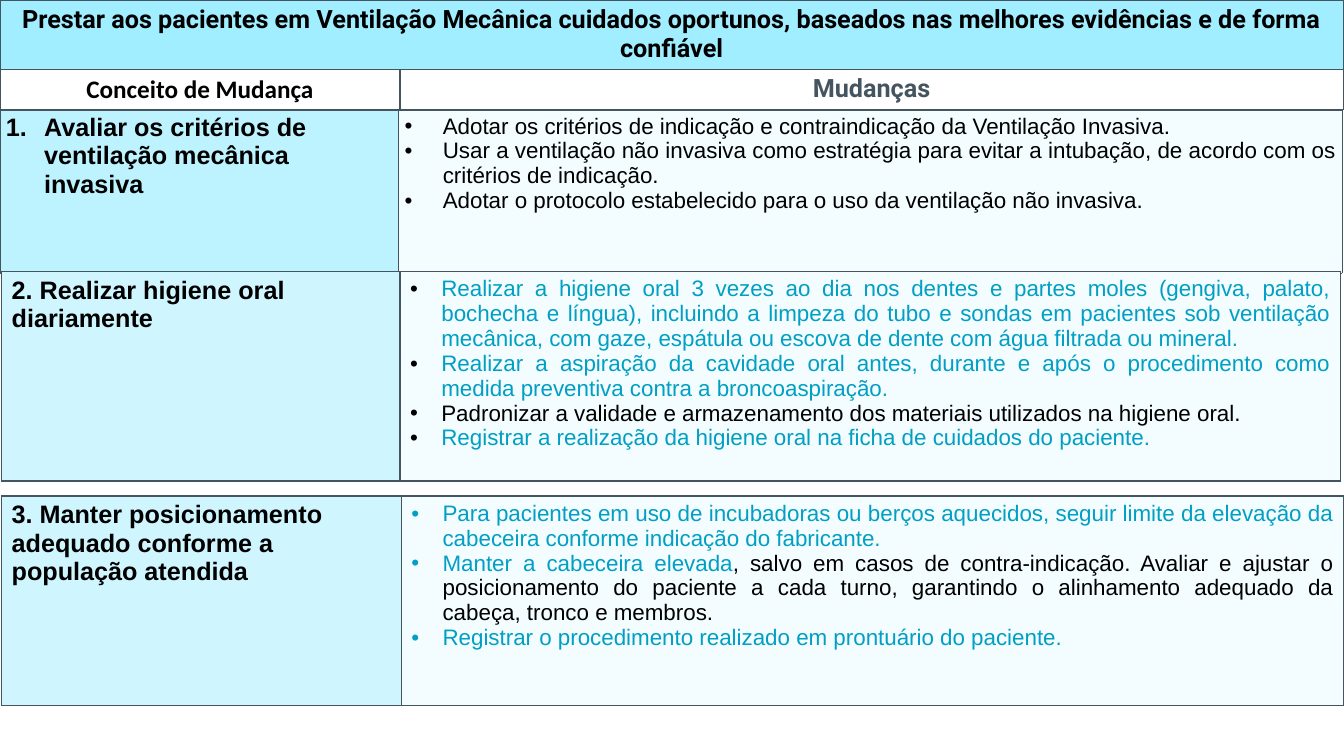
import pptx
import pptx.util
import pptx.dml.color
import pptx.enum.text
import pptx.oxml
import pptx.oxml.ns
from lxml import etree

Cm, Pt = pptx.util.Cm, pptx.util.Pt
RGBColor = pptx.dml.color.RGBColor
Align = pptx.enum.text.PP_ALIGN
Anchor = pptx.enum.text.MSO_ANCHOR
qn = pptx.oxml.ns.qn

BLACK = RGBColor(0x00, 0x00, 0x00)
WHITE = RGBColor(0xFF, 0xFF, 0xFF)
SLATE = RGBColor(0x45, 0x55, 0x60)
TEAL = RGBColor(0x00, 0x9F, 0xC3)
GOAL_BLUE = RGBColor(0xA0, 0xEE, 0xFF)
CRITERIA_BLUE = RGBColor(0xBD, 0xF2, 0xFF)
CONCEPT_BLUE = RGBColor(0xCF, 0xF6, 0xFF)
CHANGE_BLUE = RGBColor(0xF3, 0xFC, 0xFF)

CONCEPT = {"name": "Arial", "size": Pt(18), "bold": True}
CHANGE = {"name": "Arial", "size": Pt(16), "bold": False}
GOAL = {"name": "Roboto", "size": Pt(18), "bold": True}
CONCEPT_HEADING = {"name": "Calibri", "size": Pt(18), "bold": True}
TIGHT = {"margin_left": Cm(0.15), "margin_right": Cm(0.15),
         "margin_top": Cm(0.08), "margin_bottom": Cm(0.08)}
HEADING_MARGINS = {"margin_left": Cm(0.03), "margin_right": Cm(0.03),
                   "margin_top": Cm(0.03), "margin_bottom": Cm(0)}

CRITERIA_CHANGES = [
    [("Adotar os critérios de indicação e contraindicação da Ventilação Invasiva.", BLACK)],
    [("Usar a ventilação não invasiva como estratégia para evitar a intubação, "
      "de acordo com os critérios de indicação.", BLACK)],
    [("Adotar o protocolo estabelecido para o uso da ventilação não invasiva.", BLACK)],
]
HYGIENE_CHANGES = [
    [("Realizar a higiene oral 3 vezes ao dia nos dentes e partes moles (gengiva, palato, "
      "bochecha e língua), incluindo a limpeza do tubo e sondas em pacientes sob ventilação "
      "mecânica, com gaze, espátula ou escova de dente com água filtrada ou mineral.", TEAL)],
    [("Realizar a aspiração da cavidade oral antes, durante e após o procedimento como "
      "medida preventiva contra a broncoaspiração.", TEAL)],
    [("Padronizar a validade e armazenamento dos materiais utilizados na higiene oral.", BLACK)],
    [("Registrar a realização da higiene oral na ficha de cuidados do paciente.", TEAL)],
]
POSITION_CHANGES = [
    [("Para pacientes em uso de incubadoras ou berços aquecidos, seguir limite da elevação "
      "da cabeceira conforme indicação do fabricante.", TEAL)],
    [("Manter a cabeceira elevada", TEAL),
     (", salvo em casos de contra-indicação. Avaliar e ajustar o posicionamento do paciente "
      "a cada turno, garantindo o alinhamento adequado da cabeça, tronco e membros.", BLACK)],
    [("Registrar o procedimento realizado em prontuário do paciente.", TEAL)],
]


def set_attributes(target, values):
    for key, value in values.items():
        setattr(target, key, value)


def add_grid(slide, left, top, widths, heights):
    frame = slide.shapes.add_table(len(heights), len(widths), Cm(left), Cm(top),
                                   Cm(sum(widths)), Cm(sum(heights)))
    grid = frame.table
    set_attributes(grid, {"first_row": False, "horz_banding": False})
    for column, width in zip(grid.columns, widths):
        column.width = Cm(width)
    for row, height in zip(grid.rows, heights):
        row.height = Cm(height)
    return grid


def paint_cell(cell, color, line_width, layout):
    cell.fill.solid()
    cell.fill.fore_color.rgb = color
    set_attributes(cell, layout)
    properties = cell._tc.get_or_add_tcPr()
    for position, side in enumerate(("lnL", "lnR", "lnT", "lnB")):
        border = etree.Element(qn(f"a:{side}"), w=str(Pt(line_width)))
        solid = etree.SubElement(border, qn("a:solidFill"))
        etree.SubElement(solid, qn("a:srgbClr"), val=str(SLATE))
        properties.insert(position, border)


def add_marker(paragraph, indent, numbered=False, color=None):
    properties = paragraph._p.get_or_add_pPr()
    properties.set("marL", str(Cm(indent)))
    properties.set("indent", str(-Cm(indent)))
    if color is not None:
        marker_color = etree.SubElement(properties, qn("a:buClr"))
        etree.SubElement(marker_color, qn("a:srgbClr"), val=str(color))
    etree.SubElement(properties, qn("a:buFont"), typeface="Arial")
    if numbered:
        etree.SubElement(properties, qn("a:buAutoNum"), type="arabicPeriod")
    else:
        etree.SubElement(properties, qn("a:buChar"), char="•")


def add_text(paragraph, text, style, color=BLACK):
    run = paragraph.add_run()
    run.text = text
    set_attributes(run.font, style)
    run.font.color.rgb = color


def add_heading(cell, text, style, fill, color=BLACK, layout={}):
    paint_cell(cell, fill, 1, layout)
    paragraph = cell.text_frame.paragraphs[0]
    paragraph.alignment = Align.CENTER
    add_text(paragraph, text, style, color)


def add_header(slide):
    header = add_grid(slide, 0, 0, (10.08, 23.77), (1.75, 1))
    goal = header.cell(0, 0)
    goal.merge(header.cell(0, 1))
    paint_cell(header.cell(0, 1), GOAL_BLUE, 1, {})
    add_heading(goal, "Prestar aos pacientes em Ventilação Mecânica cuidados oportunos, "
                "baseados nas melhores evidências e de forma confiável", GOAL, GOAL_BLUE)
    middle = {"vertical_anchor": Anchor.MIDDLE}
    add_heading(header.cell(1, 0), "Conceito de Mudança", CONCEPT_HEADING, WHITE,
                layout={**middle, **HEADING_MARGINS})
    add_heading(header.cell(1, 1), "Mudanças", GOAL, WHITE, SLATE, middle)


def add_concept(slide, place, widths, height, concept, changes, fill=CONCEPT_BLUE,
                numbered=False, indent=0.79, marker_color=None, line_width=1, layout={}):
    grid = add_grid(slide, *place, widths, (height,))
    concept_cell, changes_cell = grid.cell(0, 0), grid.cell(0, 1)
    paint_cell(concept_cell, fill, line_width, layout)
    paint_cell(changes_cell, CHANGE_BLUE, line_width, layout)
    title = concept_cell.text_frame.paragraphs[0]
    if numbered:
        add_marker(title, indent, numbered=True)
    add_text(title, concept, CONCEPT)
    body = changes_cell.text_frame
    for index, change in enumerate(changes):
        paragraph = body.add_paragraph() if index else body.paragraphs[0]
        add_marker(paragraph, indent, color=marker_color)
        paragraph.alignment = Align.JUSTIFY
        for text, color in change:
            add_text(paragraph, text, CHANGE, color)


def main():
    deck = pptx.Presentation()
    set_attributes(deck, {"slide_width": Cm(33.87), "slide_height": Cm(19.05)})
    slide = deck.slides.add_slide(deck.slide_layouts[6])
    add_header(slide)
    add_concept(slide, (0, 2.79), (10.05, 23.77), 4.09,
                "Avaliar os critérios de ventilação mecânica invasiva", CRITERIA_CHANGES,
                fill=CRITERIA_BLUE, numbered=True, indent=0.96, line_width=0.75, layout=TIGHT)
    add_concept(slide, (0.04, 6.84), (10.04, 23.7), 5.28,
                "2. Realizar higiene oral diariamente", HYGIENE_CHANGES, marker_color=BLACK)
    add_concept(slide, (0.04, 12.5), (10.07, 23.75), 5.28,
                "3. Manter posicionamento adequado conforme a população atendida",
                POSITION_CHANGES)
    deck.save("out.pptx")


if __name__ == "__main__":
    main()
